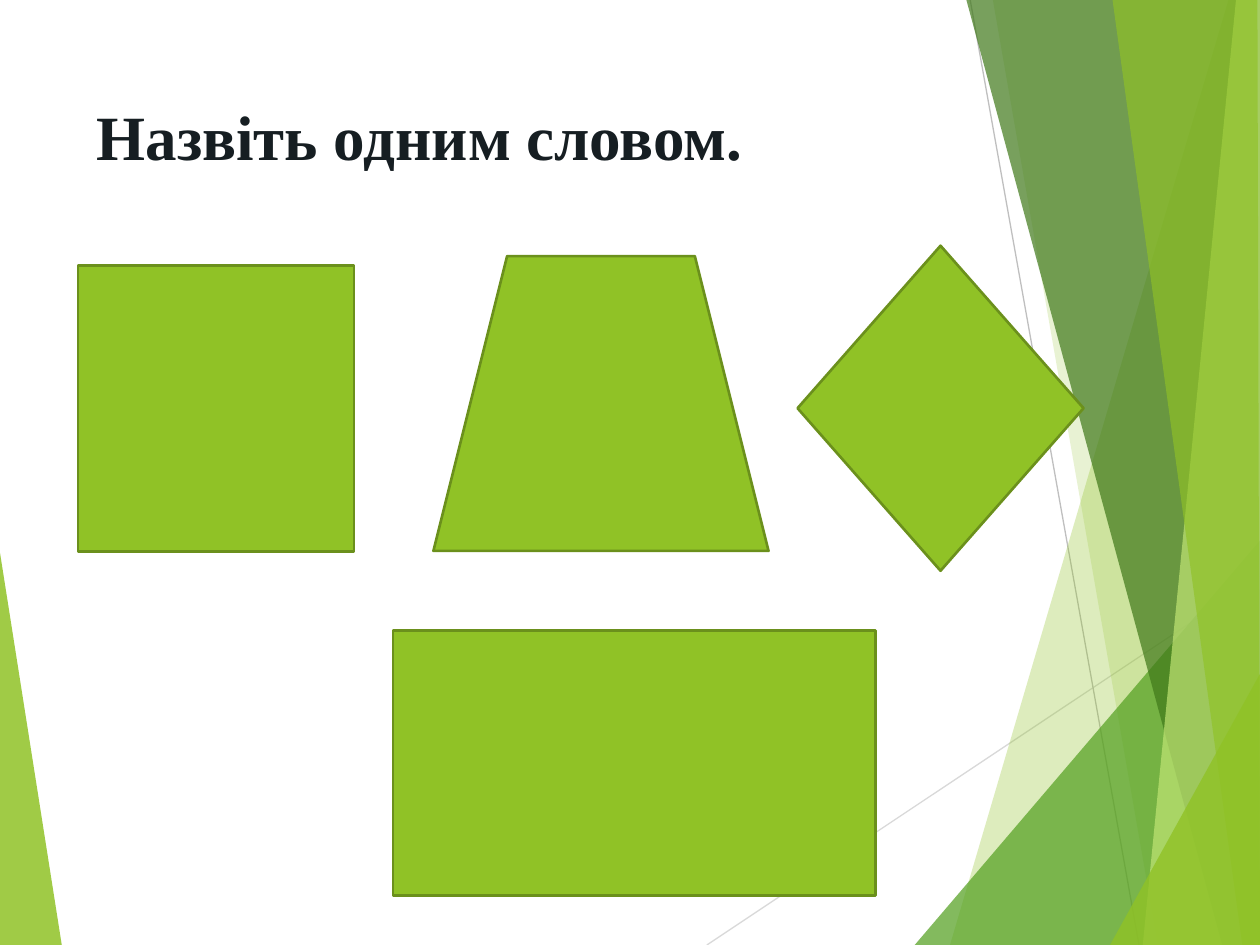
from lxml import etree
from pptx import Presentation
from pptx import util as u
from pptx.dml.color import RGBColor
from pptx.enum import shapes, text
from pptx.oxml.ns import qn

WIDE, HIGH = u.Inches(10), u.Inches(7.5)
HUES = {"lime": "90C226", "leaf": "54A021", "moss": "3F7819", "pale": "C0E474",
        "edge": "6B901C", "ink": "161E22", "silver": "D9D9D9", "grey": "BFBFBF"}
KIND = shapes.MSO_SHAPE
TITLE = {"size": u.Pt(36), "name": "Times New Roman", "bold": True}
FRAME = {"word_wrap": True, "vertical_anchor": text.MSO_ANCHOR.TOP,
         "margin_top": u.Inches(0.11)}
WEDGES = [
    ("lime", 85, [(0, 0.585), (0.049, 1), (0, 1)]),
]
BANDS = [
    ("lime", 30, [(0.975, 0), (0.754, 1), (1, 1), (1, 0)]),
    ("lime", 20, [(0.788, 0), (0.919, 1), (1, 1), (1, 0)]),
    ("leaf", 72, [(0.726, 1), (1, 0.572), (1, 1)]),
    ("moss", 70, [(0.767, 0), (0.97, 1), (1, 1), (1, 0)]),
    ("pale", 70, [(0.981, 0), (0.907, 1), (1, 1), (1, 0)]),
    ("lime", 65, [(0.883, 0), (0.986, 1), (1, 1), (0.998, 0)]),
    ("lime", 80, [(0.881, 1), (1, 0.713), (1, 1)]),
]
RAYS = [("silver", (0.561, 1), (1, 0.61)), ("grey", (0.77, 0), (0.904, 1))]
FORMS = [
    (KIND.RECTANGLE, (0.062, 0.281, 0.219, 0.303)),
    (KIND.TRAPEZOID, (0.344, 0.271, 0.266, 0.312)),
    (KIND.DIAMOND, (0.633, 0.26, 0.227, 0.344)),
    (KIND.RECTANGLE, (0.312, 0.667, 0.383, 0.281)),
]


def hue(name):
    """Return the named colour."""
    return RGBColor.from_string(HUES[name])


def place(*parts):
    """Turn shares of the slide into lengths, across and down in turn."""
    return [round(part * (HIGH if i % 2 else WIDE)) for i, part in enumerate(parts)]


def style(item, looks):
    """Set every attribute in a dict of format values."""
    for key, value in looks.items():
        setattr(item, key, value)


def paint(shape, name):
    """Fill a shape with a plain colour and drop its shadow."""
    shape.shadow.inherit = False
    shape.fill.solid()
    shape.fill.fore_color.rgb = hue(name)


def add_wedge(slide, name, alpha, points):
    """Draw a see-through polygon without an outline."""
    spots = [place(*point) for point in points]
    pen = slide.shapes.build_freeform(*spots[0])
    pen.add_line_segments(spots[1:], close=True)
    shape = pen.convert_to_shape()
    paint(shape, name)
    shape.line.fill.background()
    tint = shape.fill._xPr.find(qn("a:solidFill"))[0]
    etree.SubElement(tint, qn("a:alpha"), val=str(alpha * 1000))


def add_ray(slide, name, start, end):
    """Draw a thin straight line."""
    ray = slide.shapes.add_connector(
        shapes.MSO_CONNECTOR.STRAIGHT, *place(*start, *end))
    ray.line.color.rgb = hue(name)
    ray.line.width = u.Pt(0.75)
    etree.SubElement(ray._element.spPr, qn("a:effectLst"))


def add_form(slide, kind, box):
    """Draw one outlined geometric figure."""
    shape = slide.shapes.add_shape(kind, *place(*box))
    paint(shape, "lime")
    shape.line.color.rgb = hue("edge")
    shape.line.width = u.Pt(1.5)


def add_title(slide, words, box):
    """Write the heading."""
    frame = slide.shapes.add_textbox(*place(*box)).text_frame
    style(frame, FRAME)
    run = frame.paragraphs[0].add_run()
    run.text = words
    style(run.font, TITLE)
    run.font.color.rgb = hue("ink")


def main():
    """Build and save the slide."""
    deck = Presentation()
    style(deck, {"slide_width": WIDE, "slide_height": HIGH})
    slide = deck.slides.add_slide(deck.slide_layouts[6])
    for add, rows in ((add_wedge, WEDGES), (add_ray, RAYS),
                      (add_wedge, BANDS), (add_form, FORMS)):
        for row in rows:
            add(slide, *row)
    add_title(slide, "Назвіть одним словом.", (0.067, 0.089, 0.694, 0.192))
    deck.save("out.pptx")


if __name__ == "__main__":
    main()
